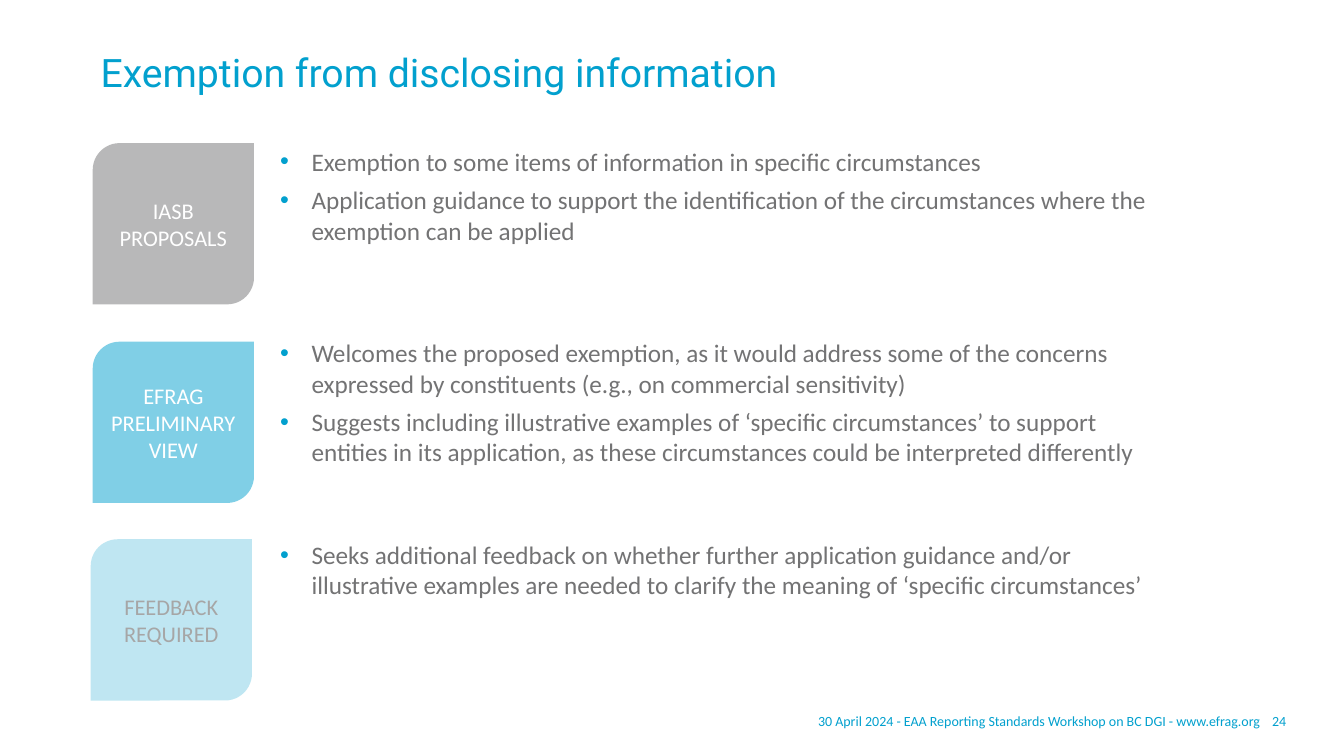
from dataclasses import dataclass

from lxml import etree
from pptx import Presentation
from pptx.dml.color import RGBColor
from pptx.enum.shapes import MSO_SHAPE
from pptx.enum.text import MSO_ANCHOR, MSO_AUTO_SIZE, PP_ALIGN
from pptx.oxml.ns import qn
from pptx.shapes.autoshape import Shape
from pptx.slide import Slide
from pptx.text.text import TextFrame
from pptx.util import Pt

BADGE_SHAPE = MSO_SHAPE.ROUND_2_DIAG_RECTANGLE
MIDDLE, TOP = MSO_ANCHOR.MIDDLE, MSO_ANCHOR.TOP
LEFT, CENTER, RIGHT = PP_ALIGN.LEFT, PP_ALIGN.CENTER, PP_ALIGN.RIGHT
FIT_TEXT = MSO_AUTO_SIZE.SHAPE_TO_FIT_TEXT

BLUE = RGBColor(0x02, 0xA0, 0xCE)
PALE_BLUE = RGBColor(0x80, 0xCF, 0xE6)
GREY = RGBColor(0x73, 0x73, 0x74)
LIGHT_GREY = RGBColor(0xA6, 0xA6, 0xA6)
WHITE = RGBColor(0xFF, 0xFF, 0xFF)

BADGE_SIZE = 115.2
BULLET_LEFT, BULLET_WIDTH = 192.96, 637.92
BULLET_INDENT = 22.5


@dataclass(frozen=True)
class Section:
    label: str
    fill: RGBColor
    label_color: RGBColor
    badge_left: float
    badge_top: float
    bullets_top: float
    bullets_height: float
    bullets: tuple[str, ...]


SECTIONS = (
    Section("IASB PROPOSALS", GREY, WHITE, 66.24, 102.24, 100.8, 78.48, (
        "Exemption to some items of information in specific circumstances",
        "Application guidance to support the identification of the circumstances "
        "where the exemption can be applied",
    )),
    Section("EFRAG PRELIMINARY VIEW", BLUE, WHITE, 66.24, 244.08, 237.6, 100.8, (
        "Welcomes the proposed exemption, as it would address some of the concerns "
        "expressed by constituents (e.g., on commercial sensitivity)",
        "Suggests including illustrative examples of ‘specific circumstances’ to support "
        "entities in its application, as these circumstances could be interpreted differently",
    )),
    Section("FEEDBACK REQUIRED", PALE_BLUE, LIGHT_GREY, 64.8, 385.2, 381.6, 51.12, (
        "Seeks additional feedback on whether further application guidance and/or "
        "illustrative examples are needed to clarify the meaning of ‘specific circumstances’",
    )),
)


def add_bullet(p) -> None:
    """Give the paragraph a hanging blue bullet."""
    pPr = p._p.get_or_add_pPr()
    pPr.set("marL", str(Pt(BULLET_INDENT)))
    pPr.set("indent", str(-Pt(BULLET_INDENT)))
    color = etree.SubElement(pPr, qn("a:buClr"))
    etree.SubElement(color, qn("a:srgbClr")).set("val", str(BLUE))
    etree.SubElement(pPr, qn("a:buFont")).set("typeface", "Arial")
    etree.SubElement(pPr, qn("a:buChar")).set("char", "•")


def write(tf: TextFrame, *texts: str, size: float, color: RGBColor, font: str = "Calibri",
          align: PP_ALIGN = LEFT, anchor: MSO_ANCHOR = MIDDLE, bullets: bool = False,
          gap: float = 0, line_spacing: float = 1.0) -> None:
    """Write one paragraph per text, with gap points between them."""
    tf.word_wrap = True
    tf.vertical_anchor = anchor
    for i, text in enumerate(texts):
        p = tf.add_paragraph() if i else tf.paragraphs[0]
        if bullets:
            add_bullet(p)
        p.alignment = align
        p.line_spacing = line_spacing
        p.space_before = Pt(gap if i else 0)
        r = p.add_run()
        r.text = text
        r.font.name, r.font.size, r.font.color.rgb = font, Pt(size), color


def add_text_frame(s: Slide, left: float, top: float, width: float, height: float) -> TextFrame:
    return s.shapes.add_textbox(Pt(left), Pt(top), Pt(width), Pt(height)).text_frame


def set_half_transparent(sp: Shape) -> None:
    color = sp.fill._xPr.find(qn("a:solidFill"))[0]
    etree.SubElement(color, qn("a:alpha")).set("val", "50000")


def add_section(s: Slide, section: Section) -> None:
    sp = s.shapes.add_shape(BADGE_SHAPE, Pt(section.badge_left), Pt(section.badge_top),
                            Pt(BADGE_SIZE), Pt(BADGE_SIZE))
    sp.shadow.inherit = False
    sp.fill.solid()
    sp.fill.fore_color.rgb = section.fill
    set_half_transparent(sp)
    sp.line.fill.background()
    write(sp.text_frame, section.label, size=16, color=section.label_color, align=CENTER)

    tf = add_text_frame(s, BULLET_LEFT, section.bullets_top, BULLET_WIDTH, section.bullets_height)
    write(tf, *section.bullets, size=18, color=GREY, anchor=TOP, bullets=True, gap=6)
    tf.auto_size = FIT_TEXT


def add_footer(s: Slide, left: float, width: float, text: str) -> None:
    tf = add_text_frame(s, left, 500.4, width, 28.8)
    tf.margin_left = tf.margin_right = 0
    write(tf, text, size=10, color=BLUE, align=RIGHT)


def main() -> None:
    prs = Presentation()
    prs.slide_width, prs.slide_height = Pt(960), Pt(540)
    s = prs.slides.add_slide(prs.slide_layouts[6])

    write(add_text_frame(s, 64.8, 30.24, 828, 46.8), "Exemption from disclosing information",
          size=28, color=BLUE, font="Roboto", line_spacing=0.9)
    for section in SECTIONS:
        add_section(s, section)
    add_footer(s, 468, 432, "30 April 2024 - EAA Reporting Standards Workshop on BC DGI - www.efrag.org")
    add_footer(s, 900, 18.72, "24")
    prs.save("out.pptx")


if __name__ == "__main__":
    main()
